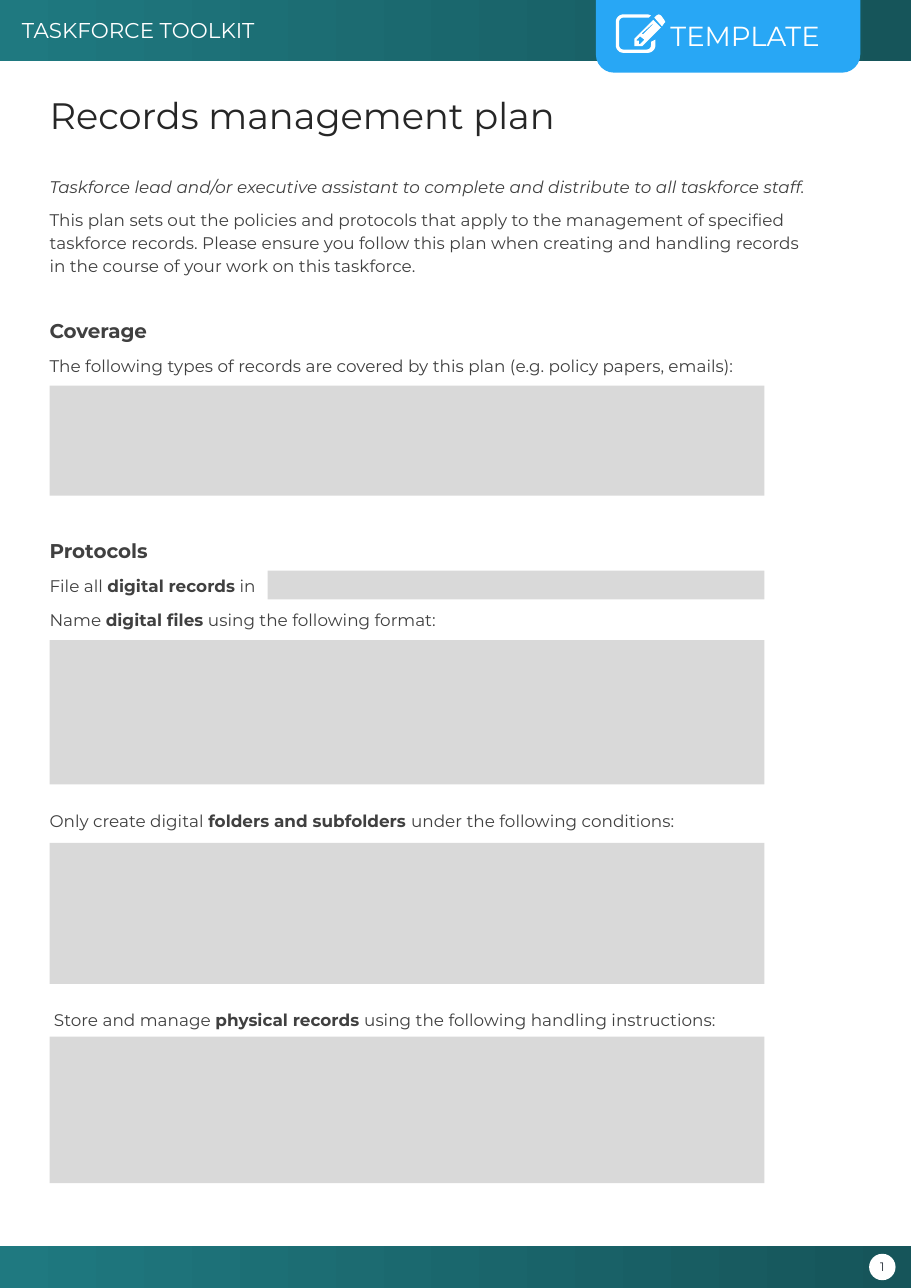
from dataclasses import dataclass
from math import cos, radians, sin

from pptx import Presentation
from pptx.dml.color import RGBColor
from pptx.enum.shapes import MSO_SHAPE as Shape
from pptx.enum.text import MSO_ANCHOR as Anchor, PP_ALIGN as Align
from pptx.util import Inches, Pt


@dataclass(frozen=True)
class Theme:
    font: str = "Montserrat"
    teal: str = "1F7980"
    dark_teal: str = "16555A"
    blue: str = "28A7F5"
    white: str = "FFFFFF"
    field: str = "D9D9D9"
    title_ink: str = "262626"
    body_ink: str = "404040"
    number_ink: str = "222A35"
    title: int = 24
    tab: int = 18
    banner: int = 14
    heading: int = 13
    body: int = 11
    number: int = 8


THEME = Theme()
PAGE_WIDTH, PAGE_HEIGHT = 8.27, 11.69
MARGIN, FIELD_WIDTH, TEXT_WIDTH = 0.45, 6.49, 6.93


def style(span, size, color, bold=False, italic=False):
    font = span.font
    font.name, font.size = THEME.font, Pt(size)
    font.bold, font.italic = bold, italic
    font.color.rgb = RGBColor.from_string(color)


def set_insets(frame, left=0, top=0, right=0, bottom=0):
    frame.margin_left, frame.margin_top = Inches(left), Inches(top)
    frame.margin_right, frame.margin_bottom = Inches(right), Inches(bottom)


def paint(shape, color):
    shape.shadow.inherit = False
    shape.fill.solid()
    shape.fill.fore_color.rgb = RGBColor.from_string(color)
    shape.line.fill.background()


def add_block(page, kind, box, color):
    shape = page.shapes.add_shape(kind, *map(Inches, box))
    paint(shape, color)
    return shape


def add_label(shape, text, size, color, align, **insets):
    frame = shape.text_frame
    set_insets(frame, **insets)
    frame.vertical_anchor = Anchor.MIDDLE
    frame.text = text
    para = frame.paragraphs[0]
    para.alignment = align
    style(para.runs[0], size, color)


def add_band(page, box):
    band = add_block(page, Shape.RECTANGLE, box, THEME.teal)
    band.fill.gradient()
    band.fill.gradient_angle = 0
    for stop, color, position in zip(band.fill.gradient_stops, (THEME.teal, THEME.dark_teal), (0, 1)):
        stop.color.rgb = RGBColor.from_string(color)
        stop.position = position
    return band


def arc(x, y, radius, start, end, steps=6):
    angles = [radians(start + (end - start) * i / steps) for i in range(steps + 1)]
    return [(x + radius * cos(a), y + radius * sin(a)) for a in angles]


def add_edit_icon(page, left, top):
    sheet = [(0.36, 0.23),
             *arc(0.29, 0.28, 0.07, 0, 90), *arc(0.07, 0.28, 0.07, 90, 180),
             *arc(0.07, 0.07, 0.07, 180, 270), (0.29, 0), (0.32, 0.01), (0.3, 0.03),
             *arc(0.07, 0.07, 0.04, 270, 180), *arc(0.07, 0.28, 0.04, 180, 90),
             *arc(0.28, 0.28, 0.04, 90, 0), (0.32, 0.25)]
    pencil = [(0.41, 0.12), (0.24, 0.29), (0.17, 0.29), (0.17, 0.22), (0.34, 0.05)]
    tip = [(0.26, 0.23), (0.22, 0.2), (0.19, 0.23), (0.19, 0.24),
           (0.21, 0.24), (0.21, 0.27), (0.22, 0.27)]
    groove = [(0.33, 0.09), (0.24, 0.17), (0.24, 0.18), (0.25, 0.18), (0.34, 0.09)]
    eraser = [(0.42, 0.11), (0.35, 0.03), (0.37, 0.01), (0.39, 0),
              (0.41, 0.01), (0.44, 0.05), (0.45, 0.07), (0.44, 0.08)]
    builder = None
    for outline in (sheet, pencil, tip, groove, eraser):
        points = [(Inches(left + x), Inches(top + y)) for x, y in outline]
        if builder is None:
            builder = page.shapes.build_freeform(*points[0])
        else:
            builder.move_to(*points[0])
        builder.add_line_segments(points[1:], close=True)
    paint(builder.convert_to_shape(), THEME.white)


def add_header(page, left, top, width, height):
    band = add_band(page, (left, top, width, height))
    add_label(band, "TASKFORCE TOOLKIT", THEME.banner, THEME.white, Align.LEFT,
              left=0.2, top=0.08, right=0.1, bottom=0.08)
    # Template tab with its icon
    tab_left = left + width - 2.86
    tab = add_block(page, Shape.ROUND_2_SAME_RECTANGLE, (tab_left, top, 2.4, 0.66), THEME.blue)
    tab.adjustments[0], tab.adjustments[1] = 0, 0.25
    add_label(tab, "TEMPLATE", THEME.tab, THEME.white, Align.CENTER, left=0.31, top=0.04)
    add_edit_icon(page, tab_left + 0.18, top + 0.13)


def add_footer(page, left, top, width, height):
    add_band(page, (left, top, width, height))
    size = 0.24
    badge = add_block(page, Shape.OVAL,
                      (left + width - 0.38, top + (height - size) / 2, size, size), THEME.white)
    add_label(badge, "1", THEME.number, THEME.number_ink, Align.CENTER)
    badge.text_frame.word_wrap = False


def add_title(page, left, top, width, height):
    title = page.shapes.title
    title.left, title.top, title.width, title.height = map(Inches, (left, top, width, height))
    frame = title.text_frame
    set_insets(frame)
    frame.vertical_anchor = Anchor.TOP
    frame.text = "Records management plan"
    para = frame.paragraphs[0]
    para.alignment, para.line_spacing = Align.LEFT, 1.1
    style(para.runs[0], THEME.title, THEME.title_ink)


def add_section(page, left, top, width, height, paragraphs):
    """Each paragraph is a list of (text, style name) spans."""
    looks = {"plain": {}, "bold": {"bold": True}, "italic": {"italic": True},
             "heading": {"bold": True, "size": THEME.heading}}
    frame = page.shapes.add_textbox(*map(Inches, (left, top, width, height))).text_frame
    frame.word_wrap = True
    set_insets(frame)
    for i, spans in enumerate(paragraphs):
        para = frame.add_paragraph() if i else frame.paragraphs[0]
        para.line_spacing, para.space_after = 1.13, Pt(7)
        for text, look in spans:
            span = para.add_run()
            span.text = text
            style(span, **{"size": THEME.body, "color": THEME.body_ink, **looks[look]})


# Top, height, left indent and paragraphs of each section
SECTIONS = [
    (1.58, 1.04, 0, [
        [("Taskforce lead and/or executive assistant to complete and distribute "
          "to all taskforce staff.", "italic")],
        [("This plan sets out the policies and protocols that apply to the management of "
          "specified taskforce records. Please ensure you follow this plan when creating and "
          "handling records in the course of your work on this taskforce.", "plain")]]),
    (2.86, 0.6, 0, [
        [("Coverage", "heading")],
        [("The following types of records are covered by this plan "
          "(e.g. policy papers, emails):", "plain")]]),
    (4.86, 0.9, 0, [
        [("Protocols", "heading")],
        [("File all ", "plain"), ("digital records", "bold"), (" in", "plain")],
        [("Name ", "plain"), ("digital files", "bold"),
         (" using the following format:", "plain")]]),
    (7.33, 0.25, 0, [
        [("Only create digital ", "plain"), ("folders and subfolders ", "bold"),
         ("under the following conditions:", "plain")]]),
    (9.14, 0.25, 0.04, [
        [("Store and manage ", "plain"), ("physical records ", "bold"),
         ("using the following handling instructions:", "plain")]]),
]

# Top, height and left indent of each answer field
FIELDS = [(3.5, 1, 0), (5.18, 0.26, 1.98), (5.81, 1.31, 0), (7.65, 1.28, 0), (9.41, 1.33, 0)]


def add_form(page, left):
    for top, height, indent, paragraphs in SECTIONS:
        add_section(page, left + indent, top, TEXT_WIDTH - indent, height, paragraphs)
    for top, height, indent in FIELDS:
        add_block(page, Shape.RECTANGLE,
                  (left + indent, top, FIELD_WIDTH - indent, height), THEME.field)


def main():
    deck = Presentation()
    deck.slide_width, deck.slide_height = Inches(PAGE_WIDTH), Inches(PAGE_HEIGHT)
    page = deck.slides.add_slide(deck.slide_layouts[5])
    add_header(page, 0, 0, PAGE_WIDTH, 0.55)
    add_footer(page, 0, PAGE_HEIGHT - 0.38, PAGE_WIDTH, 0.38)
    add_title(page, MARGIN, 0.8, 5.72, 0.6)
    add_form(page, MARGIN)
    deck.save("out.pptx")


if __name__ == "__main__":
    main()
